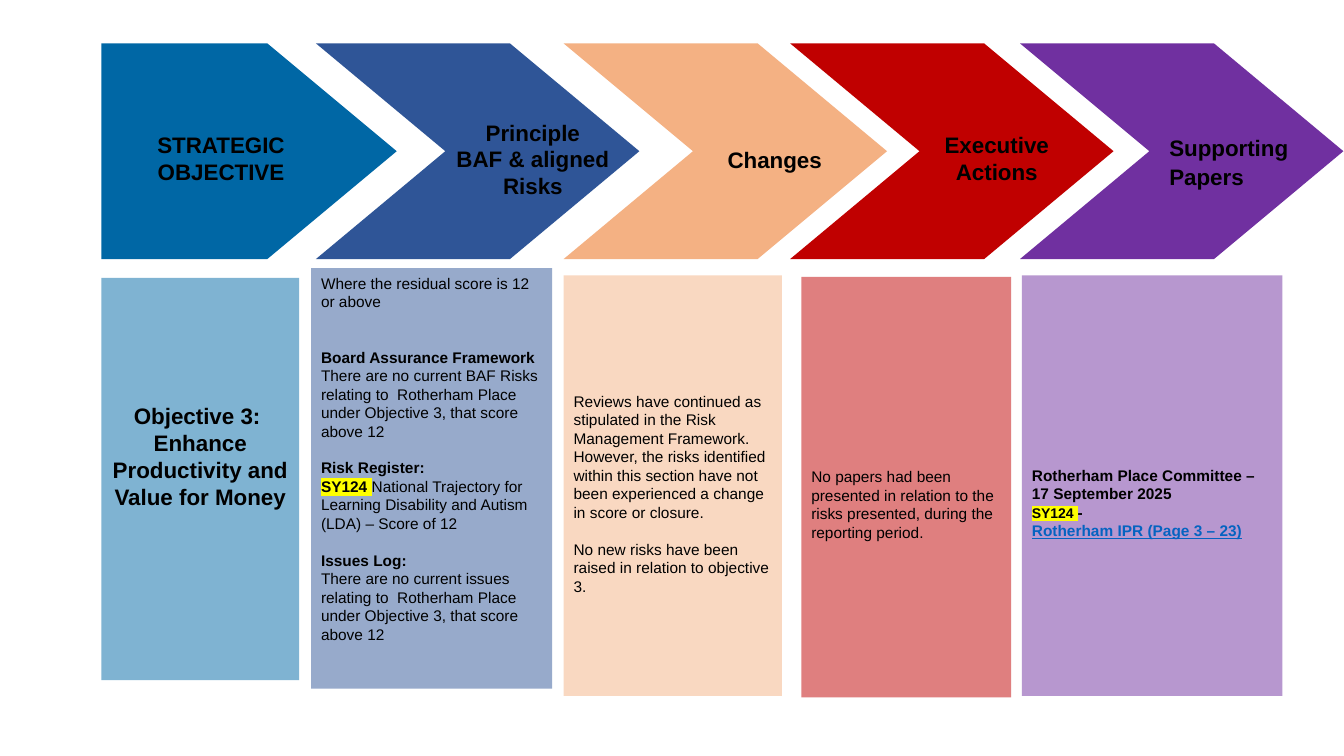
from lxml.etree import SubElement
from pptx import Presentation
from pptx.dml.color import RGBColor
from pptx.enum.shapes import MSO_SHAPE
from pptx.enum.text import MSO_ANCHOR, PP_ALIGN
from pptx.oxml.ns import qn
from pptx.util import Pt

COLOURS = {
    "blue": "0067A5", "blue tint": "7FB3D2",
    "navy": "2F5597", "navy tint": "97AACB",
    "peach": "F4B183", "peach tint": "F9D8C1",
    "red": "C00000", "red tint": "DF7F7F",
    "purple": "7030A0", "purple tint": "B797CF",
    "ink": "000000", "marker": "FFFF00", "reference": "0563C1",
}
FONT = "Arial"
LINE = 13.2
ARROW_TOP, ARROW_HEIGHT, ARROW_WIDTH, FIRST_ARROW_WIDTH = 31, 154, 231, 211
HEADING_WIDTH = 120
BOLD = {"bold": True}
MARKED = {"bold": True, "highlight": "marker"}

ARROWS = [("blue", 72.4), ("navy", 225.7), ("peach", 402.6), ("red", 564.4), ("purple", 728.6)]

HEADINGS = [
    (["STRATEGIC", "OBJECTIVE"], 97.9, 93.4, PP_ALIGN.CENTER, 1),
    (["Principle", "BAF & aligned", "Risks"], 320.6, 84.8, PP_ALIGN.CENTER, 1),
    (["Changes"], 493.4, 104.3, PP_ALIGN.CENTER, 1),
    (["Executive", "Actions"], 652, 94, PP_ALIGN.CENTER, 1),
    (["Supporting", "Papers"], 835.2, 94.3, PP_ALIGN.LEFT, 1.07),
]

PANELS = [
    ("blue tint", (72.4, 198.6, 141.3, 287.2), 88.8, PP_ALIGN.CENTER, [
        (0, [("Objective 3:  Enhance Productivity and Value for Money", {"bold": True, "size": 16})]),
    ]),
    ("navy tint", (222.2, 191.5, 172.2, 300.4), 4, PP_ALIGN.LEFT, [
        (0, [("Where the residual score is 12 or above", {})]),
        (2, [("Board Assurance Framework", BOLD)]),
        (0, [("There are no current BAF Risks relating to  Rotherham Place under Objective 3, "
              "that score above 12", {})]),
        (1, [("Risk Register:", BOLD)]),
        (0, [("SY124 ", MARKED),
             ("National Trajectory for Learning Disability and Autism (LDA) – Score of 12", {})]),
        (1, [("Issues Log:", BOLD)]),
        (0, [("There are no current issues relating to  Rotherham Place under Objective 3, "
              "that score above 12", {})]),
    ]),
    ("peach tint", (402.6, 196.7, 156, 300.4), 83.2, PP_ALIGN.LEFT, [
        (0, [("Reviews have continued as stipulated in the Risk Management Framework. However, "
              "the risks identified within this section have not been experienced a change in "
              "score or closure.", {})]),
        (1, [("No new risks have been raised in relation to objective 3.", {})]),
    ]),
    ("red tint", (572.4, 197.8, 149.8, 300.4), 136.1, PP_ALIGN.LEFT, [
        (0, [("No papers had been presented in relation to the risks presented, during the "
              "reporting period.", {})]),
    ]),
    ("purple tint", (730, 196.7, 186, 300.4), 136.1, PP_ALIGN.LEFT, [
        (0, [("Rotherham Place Committee –", BOLD)]),
        (0, [("17 September 2025", BOLD)]),
        (0, [("SY124 ", {**MARKED, "size": 10}), ("-", BOLD)]),
        (0, [("Rotherham IPR (Page 3 – 23)", {"bold": True, "colour": "reference", "underline": True})]),
    ]),
]


def add_span(para, text, size=11, bold=False, colour="ink", underline=False, highlight=None):
    span = para.add_run()
    span.text = text
    span.font.name = FONT
    span.font.size = Pt(size)
    span.font.bold = bold
    span.font.underline = underline
    span.font.color.rgb = RGBColor.from_string(COLOURS[colour])
    if highlight:
        marker = SubElement(span.font._element, qn("a:highlight"))
        SubElement(marker, qn("a:srgbClr"), val=COLOURS[highlight])
        span.font._element.find(qn("a:solidFill")).addnext(marker)


def fill_text(frame, paragraphs, align, spacing=1):
    frame.word_wrap = True
    frame.vertical_anchor = MSO_ANCHOR.TOP
    for index, (gap_lines, spans) in enumerate(paragraphs):
        para = frame.add_paragraph() if index else frame.paragraphs[0]
        para.alignment = align
        para.line_spacing = spacing
        para.space_before = Pt(gap_lines * LINE)
        for text, style in spans:
            add_span(para, text, **style)


def add_block(page, kind, bounds, colour):
    block = page.shapes.add_shape(kind, *map(Pt, bounds))
    block.shadow.inherit = False
    block.fill.solid()
    block.fill.fore_color.rgb = RGBColor.from_string(COLOURS[colour])
    block.line.fill.background()
    return block


def main():
    deck = Presentation()
    deck.slide_width, deck.slide_height = Pt(960), Pt(540)
    page = deck.slides.add_slide(deck.slide_layouts[6])

    for index, (colour, left) in enumerate(ARROWS):
        kind = MSO_SHAPE.CHEVRON if index else MSO_SHAPE.PENTAGON
        width = ARROW_WIDTH if index else FIRST_ARROW_WIDTH
        arrow = add_block(page, kind, (left, ARROW_TOP, width, ARROW_HEIGHT), colour)
        arrow.adjustments[0] = 0.6

    for lines, left, top, align, spacing in HEADINGS:
        height = 20 * len(lines)
        box = page.shapes.add_textbox(Pt(left), Pt(top), Pt(HEADING_WIDTH), Pt(height))
        frame = box.text_frame
        frame.margin_left = frame.margin_right = frame.margin_top = frame.margin_bottom = 0
        paragraphs = [(0, [(line, {"bold": True, "size": 16})]) for line in lines]
        fill_text(frame, paragraphs, align, spacing)

    for colour, bounds, inset, align, paragraphs in PANELS:
        panel = add_block(page, MSO_SHAPE.RECTANGLE, bounds, colour)
        panel.text_frame.margin_top = Pt(inset)
        fill_text(panel.text_frame, paragraphs, align)

    deck.save("out.pptx")


if __name__ == "__main__":
    main()
